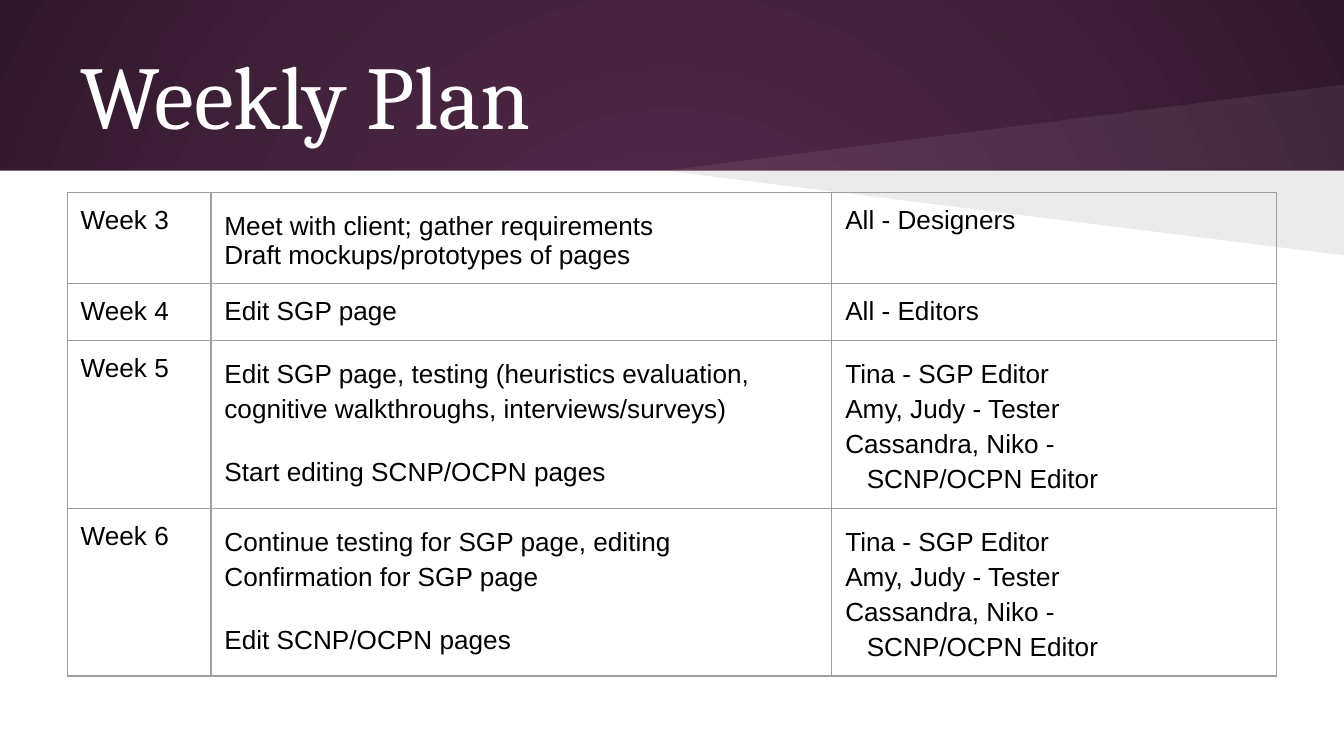
from lxml import etree
from pptx import Presentation
from pptx.dml.color import RGBColor
from pptx.enum.shapes import MSO_SHAPE
from pptx.enum.text import MSO_ANCHOR, MSO_AUTO_SIZE, PP_ALIGN
from pptx.oxml import parse_xml
from pptx.oxml.ns import nsdecls, qn
from pptx.util import Inches, Pt

RECTANGLE = MSO_SHAPE.RECTANGLE
TOP, MIDDLE = MSO_ANCHOR.TOP, MSO_ANCHOR.MIDDLE
LEFT = PP_ALIGN.LEFT
NO_AUTOFIT = MSO_AUTO_SIZE.NONE

WHITE = RGBColor(0xFF, 0xFF, 0xFF)
BLACK = RGBColor(0x00, 0x00, 0x00)
GRAY = RGBColor(0x9E, 0x9E, 0x9E)
PLUM = RGBColor(0x59, 0x2D, 0x50)
DARK_PLUM = RGBColor(0x30, 0x18, 0x2B)

SLIDE_WIDTH = 10
SLIDE_HEIGHT = SLIDE_WIDTH * 9 / 16
BAND_BOTTOM = 1.27
COLUMN_WIDTHS = (1.07, 4.62, 3.31)
ROW_HEIGHTS = (0.68, 0.42, 1.25, 1.25)

LOOSE = {"line_spacing": 1.2}
AFTER_GAP = {"space_before": 18}
INDENTED = {"line_spacing": 1.2, "indent": 0.16}

EDITING_TEAM = [
    ("Tina - SGP Editor", LOOSE),
    ("Amy, Judy - Tester", LOOSE),
    ("Cassandra, Niko -", LOOSE),
    ("SCNP/OCPN Editor", INDENTED),
]
WEEKS = [
    (
        [("Week 3", {})],
        [("Meet with client; gather requirements", LOOSE),
         ("Draft mockups/prototypes of pages", {})],
        [("All - Designers", {})],
    ),
    (
        [("Week 4", {})],
        [("Edit SGP page", {})],
        [("All - Editors", {})],
    ),
    (
        [("Week 5", {})],
        [("Edit SGP page, testing (heuristics evaluation, "
          "cognitive walkthroughs, interviews/surveys)", LOOSE),
         ("Start editing SCNP/OCPN pages", AFTER_GAP)],
        EDITING_TEAM,
    ),
    (
        [("Week 6", {})],
        [("Continue testing for SGP page, editing", LOOSE),
         ("Confirmation for SGP page", LOOSE),
         ("Edit SCNP/OCPN pages", AFTER_GAP)],
        EDITING_TEAM,
    ),
]


def write(paragraph, text, font="Arial", size=14, color=BLACK,
          line_spacing=None, space_before=0, indent=0):
    paragraph.text = text
    paragraph.alignment = LEFT
    paragraph.space_before = Pt(space_before)
    if line_spacing:
        paragraph.line_spacing = line_spacing
    if indent:
        paragraph._p.get_or_add_pPr().set("marL", str(Inches(indent)))
    run_font = paragraph.runs[0].font
    run_font.name = font
    run_font.size = Pt(size)
    run_font.color.rgb = color


class PlanSlide:
    margin = Inches(0.1)

    def __init__(self, presentation):
        self.slide = presentation.slides.add_slide(presentation.slide_layouts[5])

    def background(self, inner, outer):
        fill = self.slide.background.fill
        fill.gradient()
        for stop, color, position in zip(fill.gradient_stops, (inner, outer), (0, 1)):
            stop.color.rgb = color
            stop.position = position
        gradient = self.slide.element.find(".//" + qn("a:gradFill"))
        direction = gradient.find(qn("a:lin"))
        radial = parse_xml(
            f'<a:path {nsdecls("a")} path="circle">'
            '<a:fillToRect l="50000" t="50000" r="50000" b="50000"/></a:path>'
        )
        gradient.replace(direction, radial)

    def paint(self, shape, color, opacity=100):
        shape.shadow.inherit = False
        shape.fill.solid()
        shape.fill.fore_color.rgb = color
        shape.line.fill.background()
        if opacity < 100:
            tone = shape.element.spPr.find(".//" + qn("a:srgbClr"))
            etree.SubElement(tone, qn("a:alpha")).set("val", str(opacity * 1000))

    def panel(self, left, top, width, height, color):
        shape = self.slide.shapes.add_shape(
            RECTANGLE, Inches(left), Inches(top), Inches(width), Inches(height))
        self.paint(shape, color)

    def beam(self, points, color, opacity):
        corners = [(Inches(x), Inches(y)) for x, y in points]
        outline = self.slide.shapes.build_freeform(*corners[0])
        outline.add_line_segments(corners[1:], close=True)
        self.paint(outline.convert_to_shape(), color, opacity)

    def title(self, text, left, top, width, height):
        heading = self.slide.shapes.title
        heading.left, heading.top = Inches(left), Inches(top)
        heading.width, heading.height = Inches(width), Inches(height)
        frame = heading.text_frame
        frame.word_wrap = True
        frame.auto_size = NO_AUTOFIT
        frame.vertical_anchor = MIDDLE
        self.set_margins(frame)
        write(frame.paragraphs[0], text, font="Cambria", size=48, color=WHITE)

    def set_margins(self, box):
        box.margin_left = box.margin_right = self.margin
        box.margin_top = box.margin_bottom = self.margin

    def cell(self, cell, lines):
        self.set_margins(cell)
        cell.vertical_anchor = TOP
        properties = cell._tc.get_or_add_tcPr()
        for side in ("lnL", "lnR", "lnT", "lnB"):
            properties.append(parse_xml(
                f'<a:{side} {nsdecls("a")} w="{Pt(0.75)}"><a:solidFill>'
                f'<a:srgbClr val="{GRAY}"/></a:solidFill></a:{side}>'
            ))
        cell.fill.background()
        frame = cell.text_frame
        for number, (text, style) in enumerate(lines):
            paragraph = frame.add_paragraph() if number else frame.paragraphs[0]
            write(paragraph, text, **style)

    def table(self, rows, left, top, widths, heights):
        table = self.slide.shapes.add_table(
            len(heights), len(widths), Inches(left), Inches(top),
            Inches(sum(widths)), Inches(sum(heights))).table
        table.first_row = table.horz_banding = False
        for column, width in zip(table.columns, widths):
            column.width = Inches(width)
        for row, height, contents in zip(table.rows, heights, rows):
            row.height = Inches(height)
            for cell, lines in zip(row.cells, contents):
                self.cell(cell, lines)


def main():
    presentation = Presentation()
    presentation.slide_width = Inches(SLIDE_WIDTH)
    presentation.slide_height = Inches(SLIDE_HEIGHT)
    plan = PlanSlide(presentation)
    plan.background(PLUM, DARK_PLUM)
    plan.panel(0, BAND_BOTTOM, SLIDE_WIDTH, SLIDE_HEIGHT - BAND_BOTTOM, WHITE)
    for edge, color, opacity in ((0.63, WHITE, 7), (1.9, BLACK, 8)):
        plan.beam([(SLIDE_WIDTH, BAND_BOTTOM), (4.95, BAND_BOTTOM),
                   (SLIDE_WIDTH, edge)], color, opacity)
    plan.table(WEEKS, 0.5, 1.43, COLUMN_WIDTHS, ROW_HEIGHTS)
    plan.title("Weekly Plan", 0.5, 0.23, 9, 0.94)
    presentation.save("out.pptx")


if __name__ == "__main__":
    main()
